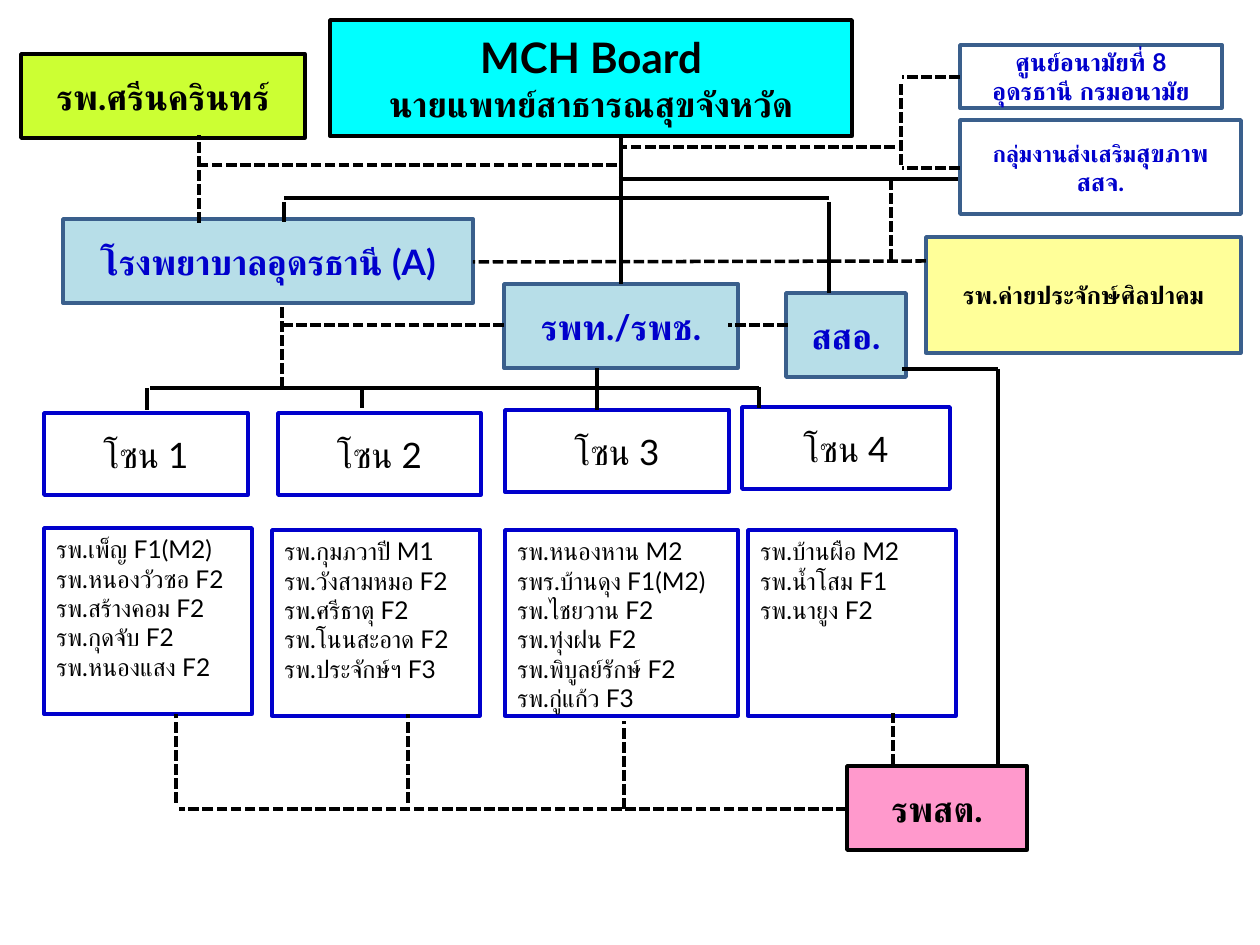
from pptx import Presentation
from pptx.dml.color import RGBColor as RGB
from pptx.enum.dml import MSO_LINE as Dash
from pptx.enum.shapes import MSO_CONNECTOR as Link, MSO_SHAPE as Preset
from pptx.enum.text import MSO_ANCHOR as Anchor, PP_ALIGN as Align
from pptx.oxml.ns import qn
from pptx.util import Pt
from lxml import etree

SCALE = 914400 / 126  # EMU per px
COLORS = {
    "black": "000000", "blue": "0000CC", "steel": "3A5F8C", "cyan": "00FFFF",
    "lime": "CCFF33", "yellow": "FFFF99", "ice": "B7DEE8", "pink": "FF99CC",
}


def emu(*lengths):
    return [round(n * SCALE) for n in lengths]


def add_box(place, paragraphs, fill, border, ink, bold=True,
            align=Align.CENTER, anchor=Anchor.MIDDLE, preset=Preset.RECTANGLE):
    """Draw a bordered box; each paragraph is a list of (text, points) runs."""
    box = slide.shapes.add_shape(preset, *emu(*place))
    box.shadow.inherit = False
    if fill:
        box.fill.solid()
        box.fill.fore_color.rgb = RGB.from_string(COLORS[fill])
    else:
        box.fill.background()
    box.line.color.rgb = RGB.from_string(COLORS[border])
    box.line.width = Pt(2)
    frame = box.text_frame
    frame.word_wrap = True
    frame.vertical_anchor = anchor
    for i, runs in enumerate(paragraphs):
        para = frame.add_paragraph() if i else frame.paragraphs[0]
        para.alignment = align
        for text, points in runs:
            run = para.add_run()
            run.text = text
            look = {"name": "Lato", "size": Pt(points), "bold": bold}
            for key, value in look.items():
                setattr(run.font, key, value)
            run.font.color.rgb = RGB.from_string(COLORS[ink])
    return box


prs = Presentation()
prs.slide_width, prs.slide_height = emu(1260, 945)
slide = prs.slides.add_slide(prs.slide_layouts[6])

# Board at the top
board = add_box((330, 20, 522, 116),
                [[("MCH Board", 24)], [("นายแพทย์สาธารณสุขจังหวัด", 20)]],
                "cyan", "black", "black", preset=Preset.ROUNDED_RECTANGLE)
board.adjustments[0] = 0

# Hospitals, offices and advisers
units = [
    ((960, 45, 262, 63), [[("ศูนย์อนามัยที่ 8 อุดรธานี กรมอนามัย", 14)]],
     None, "steel", "blue"),
    ((960, 120, 281, 94),
     [[("กลุ่มงานส่งเสริม", 13), ("สุขภาพ", 14)], [("สสจ.", 14)]],
     None, "steel", "blue"),
    ((926, 237, 315, 116), [[("รพ.ค่ายประจักษ์ศิลปาคม", 14)]],
     "yellow", "steel", "black"),
    ((63, 219, 410, 84), [[("โรงพยาบาลอุดรธานี (A)", 20)]],
     "ice", "steel", "blue"),
    ((504, 284, 234, 84), [[("รพท./รพช.", 20)]], "ice", "steel", "blue"),
    ((786, 293, 120, 84), [[("สสอ.", 20)]], "ice", "steel", "blue"),
    ((847, 766, 180, 84), [[("รพสต.", 20)]], "pink", "black", "black"),
    ((21, 54, 284, 84), [[("รพ.ศรีนครินทร์", 20)]], "lime", "black", "black"),
]
for unit in units:
    add_box(*unit)

# Zones: heading left, top, width; list left, top, width; hospitals
zones = [
    ((44, 413, 204), (44, 528, 208),
     ["รพ.เพ็ญ F1(M2)", "รพ.หนองวัวซอ F2", "รพ.สร้างคอม F2",
      "รพ.กุดจับ F2", "รพ.หนองแสง F2"]),
    ((278, 413, 203), (272, 530, 208),
     ["รพ.กุมภวาปี M1", "รพ.วังสามหมอ F2", "รพ.ศรีธาตุ F2",
      "รพ.โนนสะอาด F2", "รพ.ประจักษ์ฯ F3"]),
    ((505, 410, 224), (505, 530, 233),
     ["รพ.หนองหาน M2", "รพร.บ้านดุง F1(M2)", "รพ.ไชยวาน F2",
      "รพ.ทุ่งฝน F2", "รพ.พิบูลย์รักษ์ F2", "รพ.กู่แก้ว F3"]),
    ((742, 407, 208), (748, 530, 208),
     ["รพ.บ้านผือ M2", "รพ.น้ำโสม F1", "รพ.นายูง F2"]),
]
for number, (heading, listing, hospitals) in enumerate(zones, 1):
    add_box((*heading, 82), [[(f"โซน {number}", 20)]],
            None, "blue", "black", bold=False)
    add_box((*listing, 186), [[(name, 14)] for name in hospitals],
            None, "blue", "black", bold=False,
            align=Align.LEFT, anchor=Anchor.TOP)

# Links: x1, y1, x2, y2
command_links = [
    (621, 135, 621, 284), (619, 179, 958, 179),  # board
    (829, 198, 284, 198), (284, 202, 284, 222), (829, 202, 829, 293),
    (597, 368, 597, 410), (759, 388, 150, 388),  # zones
    (147, 388, 147, 410), (362, 387, 362, 408), (759, 387, 759, 408),
    (902, 369, 998, 369), (998, 369, 998, 766),  # district to sub-district
]
support_links = [
    (895, 147, 621, 147), (960, 77, 902, 77), (960, 168, 902, 168),
    (901, 165, 901, 82), (891, 179, 891, 261), (926, 261, 473, 262),
    (199, 223, 199, 135), (617, 165, 199, 165),  # adviser hospital
    (788, 325, 728, 325), (504, 325, 284, 325), (282, 388, 282, 304),
    (847, 809, 179, 809), (176, 803, 176, 714), (408, 803, 408, 714),
    (624, 809, 624, 721), (893, 765, 893, 713),  # sub-district
]
for links, dash in ((command_links, Dash.SOLID),
                    (support_links, Dash.SQUARE_DOT)):
    for ends in links:
        link = slide.shapes.add_connector(Link.STRAIGHT, *emu(*ends))
        link.line.color.rgb = RGB.from_string(COLORS["black"])
        for key, value in {"width": Pt(2), "dash_style": dash}.items():
            setattr(link.line, key, value)
        etree.SubElement(link._element.spPr, qn("a:effectLst"))

prs.save("out.pptx")
